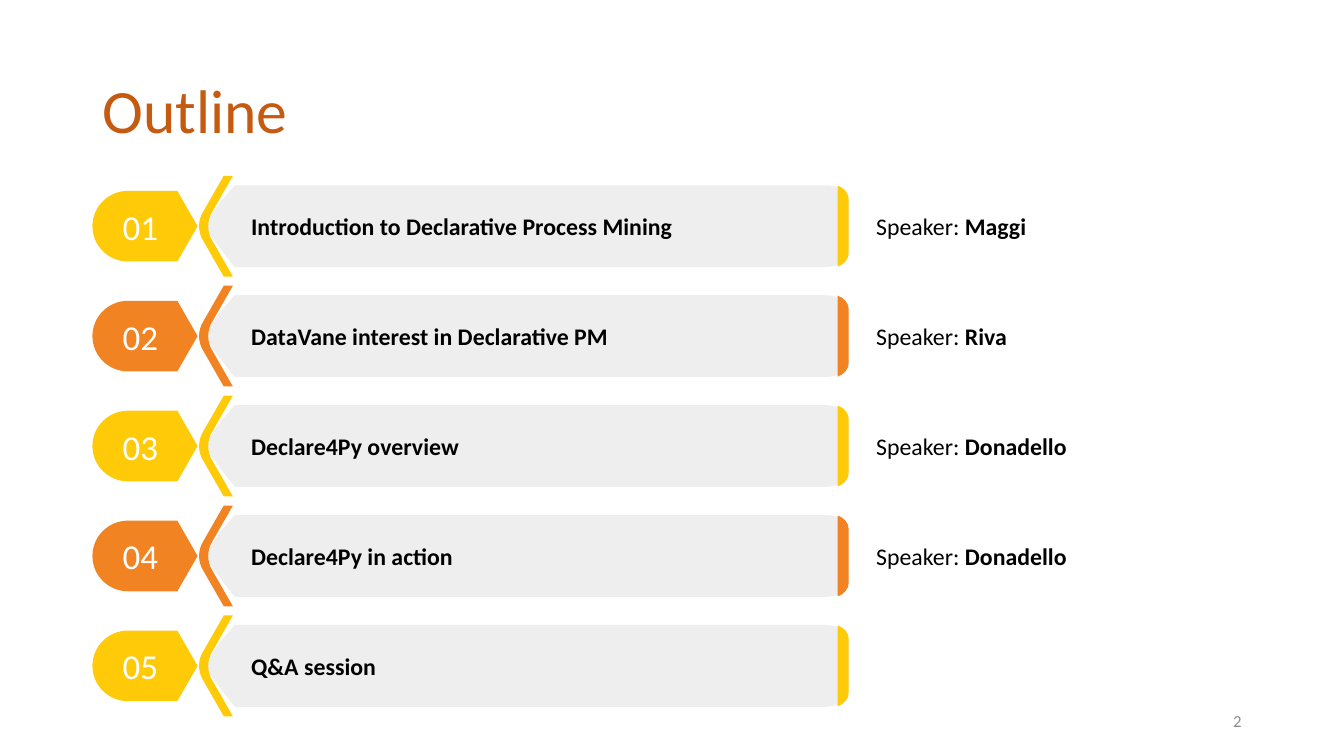
from dataclasses import dataclass

from pptx import Presentation
from pptx.dml.color import RGBColor
from pptx.enum.text import MSO_ANCHOR, PP_ALIGN
from pptx.oxml.ns import qn
from pptx.shapes.autoshape import Shape
from pptx.util import Cm, Pt

MIDDLE = MSO_ANCHOR.MIDDLE
LEFT, RIGHT = PP_ALIGN.LEFT, PP_ALIGN.RIGHT

YELLOW = RGBColor(0xFF, 0xCA, 0x08)
ORANGE = RGBColor(0xF1, 0x83, 0x22)
RUST = RGBColor(0xC5, 0x5A, 0x11)
PALE = RGBColor(0xEE, 0xEE, 0xEE)
GREY = RGBColor(0x8C, 0x8C, 0x8C)
BLACK = RGBColor(0, 0, 0)
WHITE = RGBColor(0xFF, 0xFF, 0xFF)

FONT = "Calibri"
FIRST_ROW_Y = 5.7
ROW_PITCH = 2.77
LABEL_HEIGHT = 1.02

Outline = list[tuple[float, ...]]

# Outlines in cm, y measured from the row's centre line.
# Two numbers are a corner; six are a cubic curve: two controls and its end.
BADGE: Outline = [
    (3.23, -0.89), (2.73, -0.89, 2.33, -0.49, 2.33, 0),
    (2.33, 0.49, 2.73, 0.89, 3.23, 0.89), (4.47, 0.89), (4.98, 0), (4.47, -0.89),
]
BAR: Outline = [
    (5.92, -1.03), (5.56, -0.62), (5.13, 0), (5.64, 0.68), (5.92, 1.03),
    (20.8, 1.03), (21.13, 1.03, 21.39, 0.87, 21.39, 0.67),
    (21.39, -0.67), (21.39, -0.87, 21.13, -1.03, 20.8, -1.03),
]
CAP: Outline = [
    (21.11, -1.02), (21.11, 1.02), (21.26, 0.97, 21.39, 0.84, 21.39, 0.67),
    (21.39, -0.67), (21.39, -0.84, 21.26, -0.97, 21.11, -1.02),
]
CHEVRON: Outline = [
    (5.64, -1.27), (5.13, -0.38), (4.98, -0.15, 4.98, 0.15, 5.13, 0.38),
    (5.64, 1.27), (5.87, 1.27), (5.36, 0.38),
    (5.21, 0.15, 5.21, -0.15, 5.36, -0.38), (5.87, -1.27),
]


@dataclass
class Session:
    topic: str
    color: RGBColor
    speaker: str = ""


SESSIONS = [
    Session("Introduction to Declarative Process Mining", YELLOW, "Maggi"),
    Session("DataVane interest in Declarative PM", ORANGE, "Riva"),
    Session("Declare4Py overview", YELLOW, "Donadello"),
    Session("Declare4Py in action", ORANGE, "Donadello"),
    Session("Q&A session", YELLOW),
]


def bend(sp: Shape, outline: Outline) -> None:
    """Merge each curve's three line segments into one cubic curve."""
    lines = iter(sp.element.findall(".//" + qn("a:lnTo")))
    for step in outline[1:]:
        curve = next(lines)
        if len(step) == 6:
            curve.tag = qn("a:cubicBezTo")
            for line in (next(lines), next(lines)):
                curve.append(line[0])
                line.getparent().remove(line)


def add_outline(shapes, outline: Outline, center_y: float, color: RGBColor) -> Shape:
    points = [(Cm(step[i]), Cm(center_y + step[i + 1]))
              for step in outline for i in range(0, len(step), 2)]
    builder = shapes.build_freeform(*points[0])
    builder.add_line_segments(points[1:], close=True)
    sp = builder.convert_to_shape()
    bend(sp, outline)
    sp.shadow.inherit = False
    sp.fill.solid()
    sp.fill.fore_color.rgb = color
    sp.line.fill.background()
    return sp


def write(sp: Shape, text: str, *, size: float, color: RGBColor, bold: bool = False,
          bold_tail: str = "", align: PP_ALIGN = LEFT, inset_left: float = 0.25,
          inset_y: float = 0.25, line_spacing: float = 1.0) -> None:
    """Fill a shape with one line, optionally ending in a bold run."""
    tf = sp.text_frame
    tf.word_wrap = True
    tf.vertical_anchor = MIDDLE
    tf.margin_left, tf.margin_right = Cm(inset_left), Cm(0.25)
    tf.margin_top = tf.margin_bottom = Cm(inset_y)
    p = tf.paragraphs[0]
    p.alignment = align
    p.line_spacing = line_spacing
    for part, is_bold in ((text, bold), (bold_tail, True)):
        if part:
            r = p.add_run()
            r.text = part
            r.font.name = FONT
            r.font.size = Pt(size)
            r.font.bold = is_bold
            r.font.color.rgb = color


def add_text(shapes, left: float, top: float, width: float, height: float,
             text: str, **text_format) -> None:
    sp = shapes.add_textbox(Cm(left), Cm(top), Cm(width), Cm(height))
    write(sp, text, **text_format)


def add_session(s, number: int, session: Session) -> None:
    y = FIRST_ROW_Y + (number - 1) * ROW_PITCH
    label_top = y - LABEL_HEIGHT / 2
    row = s.shapes.add_group_shape().shapes
    badge = add_outline(row, BADGE, y, session.color)
    write(badge, f"{number:02}", size=25, color=WHITE, inset_left=0.76)
    add_outline(row, BAR, y, PALE)
    add_outline(row, CAP, y, session.color)
    add_outline(row, CHEVRON, y, session.color)
    add_text(row, 6.08, label_top, 14.83, LABEL_HEIGHT, session.topic,
             size=17, color=BLACK, bold=True)
    if session.speaker:
        add_text(s.shapes, 21.83, label_top, 6.93, LABEL_HEIGHT, "Speaker: ",
                 size=17, color=BLACK, bold_tail=session.speaker)


def main() -> None:
    prs = Presentation()
    prs.slide_width, prs.slide_height = Cm(33.87), Cm(19.05)
    s = prs.slides.add_slide(prs.slide_layouts[6])
    add_text(s.shapes, 2.33, 1.01, 29.21, 3.68, "Outline", size=44, color=RUST,
             inset_y=0.13, line_spacing=0.9)
    for number, session in enumerate(SESSIONS, 1):
        add_session(s, number, session)
    add_text(s.shapes, 23.92, 17.66, 7.62, 1.01, "2", size=12, color=GREY,
             align=RIGHT, inset_y=0.13)
    prs.save("out.pptx")


if __name__ == "__main__":
    main()
